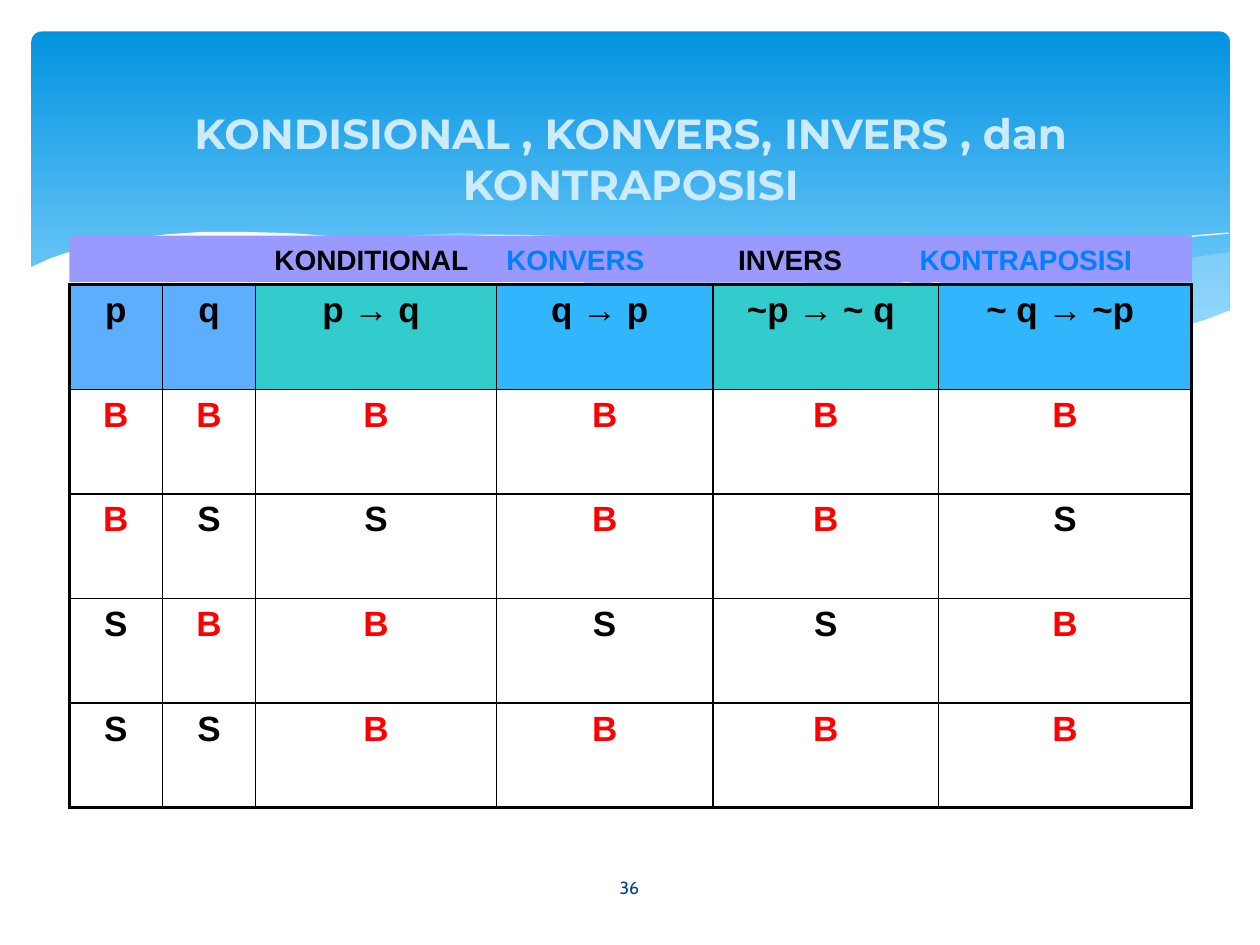
from dataclasses import dataclass
from lxml.etree import SubElement as Sub
from pptx import Presentation as Deck
from pptx.dml.color import RGBColor as Rgb
from pptx.enum.shapes import MSO_SHAPE as Kind
from pptx.enum.text import MSO_ANCHOR as Anchor, PP_ALIGN as Align
from pptx.oxml.ns import qn
from pptx.util import Inches, Pt


@dataclass(frozen=True)
class Theme:
    sky: str = "0293E0"
    haze: str = "83D3FE"
    mist: str = "C6E7FC"
    white: str = "FFFFFF"
    black: str = "000000"
    red: str = "FF0000"
    navy: str = "073E87"
    pale: str = "CDEBFF"
    blue: str = "5EAEFF"
    teal: str = "33CCCC"
    azure: str = "31B6FD"
    lilac: str = "9999FF"
    link: str = "0080FF"
    sans: str = "Arial"
    head: str = "Montserrat"
    foot: str = "Cabin"
    title: int = 24
    cell: int = 20
    label: int = 16
    page: int = 10
    thin: float = 1
    thick: float = 2.25


class Pen:
    def __init__(self, slide, theme):
        self.slide, self.theme = slide, theme

    def box(self, kind, spot, fill):
        shape = self.slide.shapes.add_shape(kind, *map(Inches, spot))
        shape.shadow.inherit = False
        shape.line.fill.background()
        if isinstance(fill, tuple):
            shape.fill.gradient()
            shape.fill.gradient_angle = 270
            for stop, (place, color) in zip(shape.fill.gradient_stops, fill):
                stop.position = place
                stop.color.rgb = Rgb.from_string(color)
        else:
            shape.fill.solid()
            shape.fill.fore_color.rgb = Rgb.from_string(fill)
        return shape

    def wave(self, points, fill=None, alpha=100):
        start, *rest = [(Inches(x), Inches(y)) for x, y in points]
        path = self.slide.shapes.build_freeform(*start)
        path.add_line_segments(rest, close=fill is not None)
        shape = path.convert_to_shape()
        shape.shadow.inherit = False
        if fill is None:
            shape.fill.background()
            shape.line.width = Pt(0)
            shape.line.color.rgb = Rgb.from_string(self.theme.white)
            return
        shape.line.fill.background()
        shape.fill.solid()
        shape.fill.fore_color.rgb = Rgb.from_string(fill)
        if alpha < 100:
            tint = next(shape.fill._xPr.iter(qn("a:srgbClr")))
            Sub(tint, qn("a:alpha"), val=str(alpha * 1000))

    def run(self, para, text, font, size, color, bold=True):
        run = para.add_run()
        run.text = text
        run.font.name, run.font.size, run.font.bold = font, Pt(size), bold
        run.font.color.rgb = Rgb.from_string(color)

    def text(self, spot, *style):
        frame = self.slide.shapes.add_textbox(*map(Inches, spot)).text_frame
        frame.word_wrap = True
        frame.vertical_anchor = Anchor.MIDDLE
        para = frame.paragraphs[0]
        para.alignment = Align.CENTER
        self.run(para, *style)

    def banner(self, spot, fill, labels):
        frame = self.box(Kind.RECTANGLE, spot, fill).text_frame
        frame.word_wrap = True
        frame.vertical_anchor = Anchor.MIDDLE
        para = frame.paragraphs[0]
        para.alignment = Align.LEFT
        tabs = Sub(para._p.get_or_add_pPr(), qn("a:tabLst"))
        for text, color, stop in labels:
            Sub(tabs, qn("a:tab"), pos=str(Inches(stop)), algn="l")
            self.run(para, "\t" + text, self.theme.sans, self.theme.label, color)

    def edge(self, cell, sides):
        props = cell._tc.get_or_add_tcPr()
        for side, outer in sides:
            width = self.theme.thick if outer else self.theme.thin
            line = Sub(props, qn("a:ln" + side), w=str(Pt(width)))
            Sub(Sub(line, qn("a:solidFill")), qn("a:srgbClr"), val=self.theme.black)

    def table(self, spot, rows, widths, fills):
        look = self.theme
        high, wide = len(rows), len(widths)
        grid = self.slide.shapes.add_table(high, wide, *map(Inches, spot)).table
        grid.horz_banding = False
        for col, width in zip(grid.columns, widths):
            col.width = Inches(width)
        for r, row in enumerate(rows):
            for c, text in enumerate(row):
                cell = grid.cell(r, c)
                self.edge(cell, (("L", c == 0), ("R", c == wide - 1),
                                 ("T", r == 0), ("B", r == high - 1)))
                if r == 0:
                    cell.fill.solid()
                    cell.fill.fore_color.rgb = Rgb.from_string(fills[c])
                else:
                    cell.fill.background()
                para = cell.text_frame.paragraphs[0]
                para.alignment = Align.CENTER
                color = look.red if text == "B" else look.black
                self.run(para, text, look.sans, look.cell, color)


RIGHT = [
    (9.76, 2), (9.48, 2.04), (9.21, 2.1), (8.91, 2.16), (8.61, 2.23), (8.05, 2.37),
    (7.53, 2.48), (7.06, 2.57), (6.61, 2.65), (6.91, 2.69), (7.19, 2.72), (7.45, 2.75),
    (7.81, 2.77), (8.14, 2.78), (8.54, 2.76), (8.81, 2.73), (9.05, 2.69), (9.28, 2.63),
    (9.49, 2.57), (9.76, 2.47)]
MIDDLE = [
    (8.93, 2.73), (8.66, 2.69), (8.07, 2.6), (7.41, 2.47), (6.68, 2.31), (6.29, 2.22),
    (5.98, 2.14), (5.69, 2.08), (5.41, 2.03), (5.14, 1.98), (4.89, 1.94), (4.42, 1.89),
    (3.99, 1.86), (3.61, 1.85), (3.28, 1.87), (2.86, 1.91), (3.23, 1.96), (3.62, 2.03),
    (4.04, 2.11), (4.49, 2.22), (5.3, 2.4), (5.84, 2.52), (6.34, 2.61), (6.8, 2.68),
    (7.22, 2.74), (7.61, 2.77), (7.96, 2.78), (8.38, 2.78), (8.67, 2.76)]
FALL = [
    (3.09, 1.95), (3.28, 1.92), (3.53, 1.89), (3.87, 1.87), (4.16, 1.87), (4.5, 1.88),
    (4.89, 1.9), (5.33, 1.94), (5.82, 2), (6.36, 2.08), (6.95, 2.19), (7.6, 2.33),
    (8.31, 2.51), (9.07, 2.72)]
RISE = [
    (6.13, 2.57), (6.53, 2.46), (6.95, 2.35), (7.48, 2.23), (8.06, 2.1), (8.66, 1.99),
    (8.95, 1.94), (9.24, 1.9), (9.51, 1.87), (9.75, 1.85)]
FRONT = [
    (9.77, 2.46), (9.59, 2.53), (9.4, 2.59), (9.2, 2.65), (8.99, 2.69), (8.75, 2.73),
    (8.5, 2.75), (8.09, 2.77), (7.78, 2.76), (7.44, 2.74), (7.08, 2.7), (6.68, 2.65),
    (6.26, 2.58), (5.79, 2.5), (5.29, 2.39), (4.75, 2.27), (4.18, 2.13), (3.65, 2.02),
    (3.16, 1.94), (2.71, 1.88), (2.3, 1.85), (1.93, 1.84), (1.61, 1.84), (1.32, 1.86),
    (1.06, 1.89), (0.85, 1.93), (0.67, 1.97), (0.52, 2.01), (0.4, 2.05), (0.29, 2.1),
    (0.23, 2.13), (0.23, 3.29), (9.77, 3.29)]


def main():
    deck = Deck()
    deck.slide_width, deck.slide_height = Inches(10), Inches(7.5)
    look = Theme()
    pen = Pen(deck.slides.add_slide(deck.slide_layouts[6]), look)

    sky = pen.box(Kind.ROUNDED_RECTANGLE, (0.25, 0.25, 9.51, 2.7),
                  ((0, look.sky), (0.9, look.haze)))
    sky.adjustments[0] = 0.03
    pen.wave(RIGHT, look.mist, 29)
    pen.wave(MIDDLE, look.mist, 40)
    pen.wave(FALL)
    pen.wave(RISE)
    pen.wave(FRONT, look.white)

    pen.text((4.36, 6.84, 1.27, 0.4), "36", look.foot, look.page, look.navy, False)
    pen.text((0.55, 0.63, 8.91, 1.25), "KONDISIONAL , KONVERS, INVERS , dan KONTRAPOSISI",
             look.head, look.title, look.pale)

    heads = ["p", "q", "p → q ", "q → p ", "~p → ~ q ", "~ q → ~p "]
    truth = ["BBBBBB", "BSSBBS", "SBBSSB", "SSBBBB"]
    pen.table((0.55, 2.26, 8.91, 4.15), [heads, *truth],
              [0.74, 0.74, 1.91, 1.72, 1.79, 2.01],
              [look.blue, look.blue] + [look.teal, look.azure] * 2)
    pen.banner((0.55, 1.87, 8.91, 0.37), look.lilac, [
        ("KONDITIONAL", look.black, 1.53), ("KONVERS", look.link, 3.37),
        ("INVERS", look.black, 5.21), ("KONTRAPOSISI", look.link, 6.65)])
    deck.save("out.pptx")


if __name__ == "__main__":
    main()
